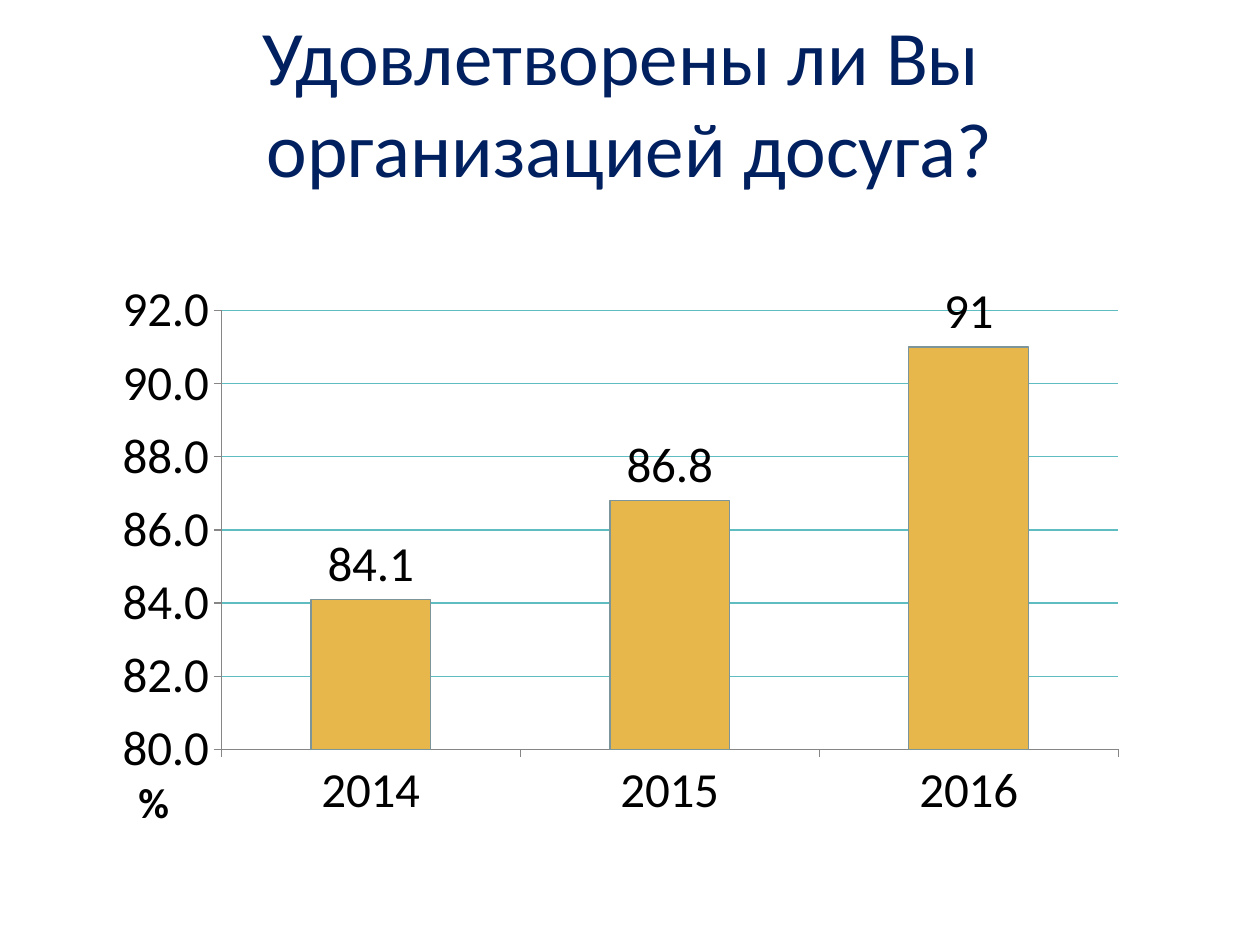
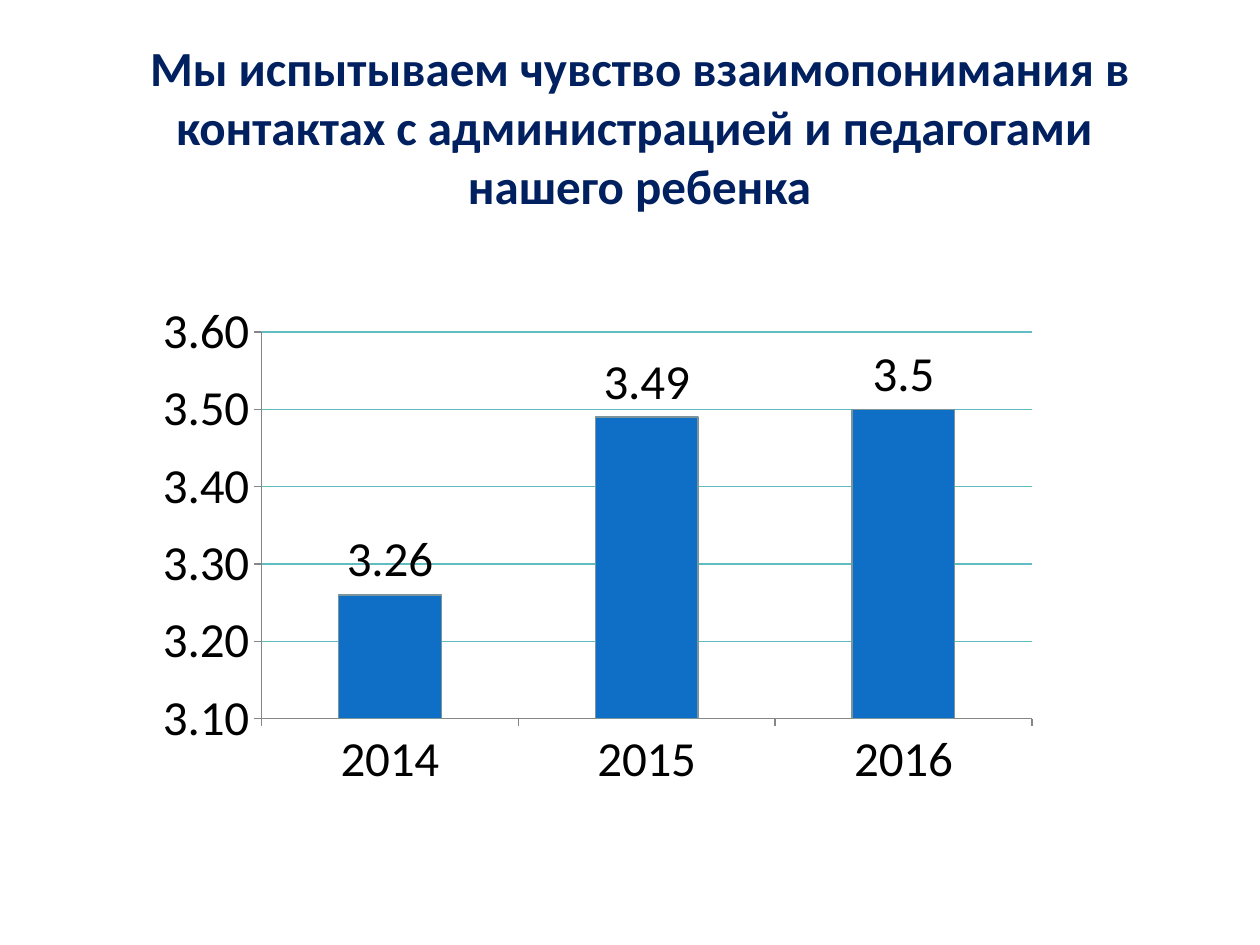
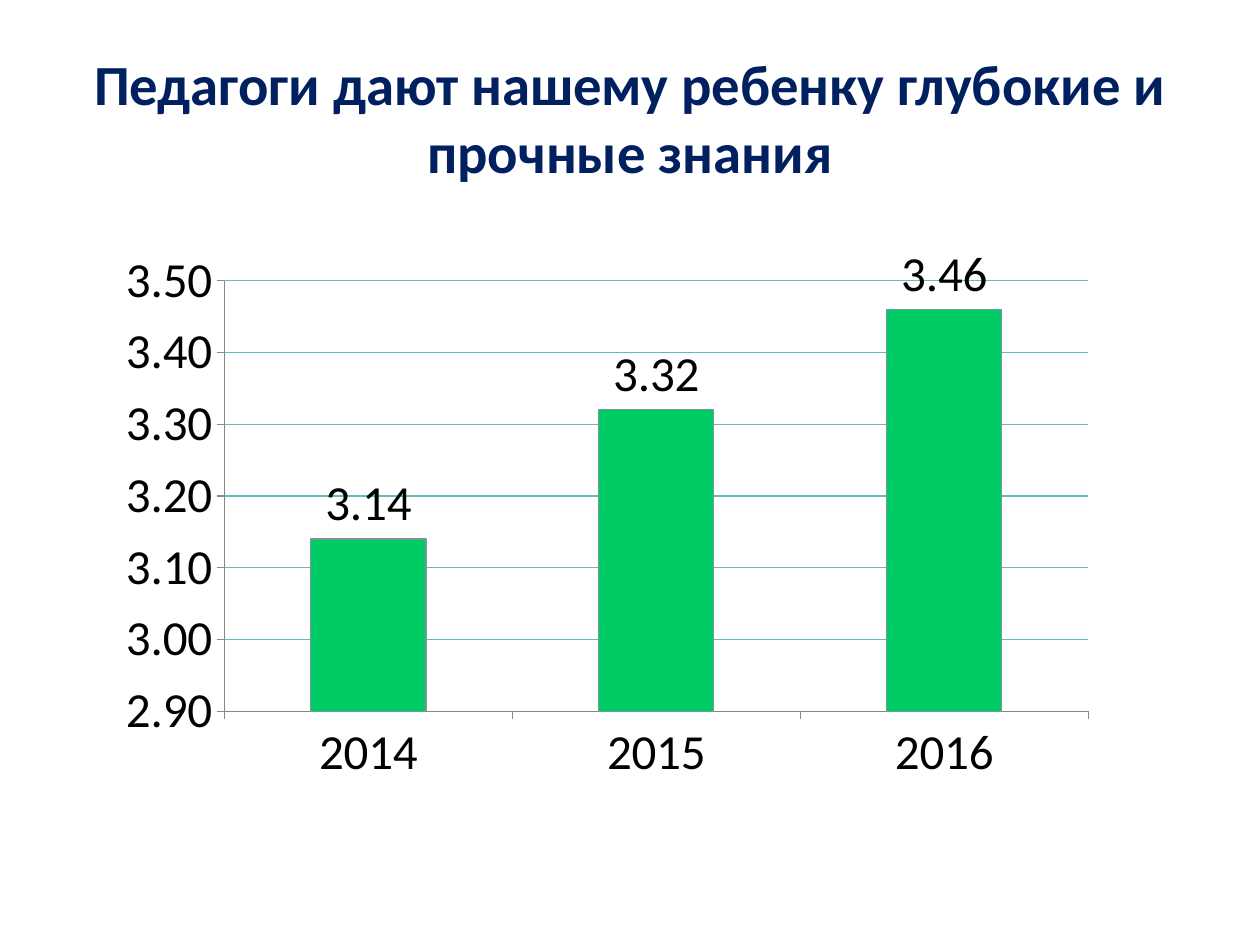
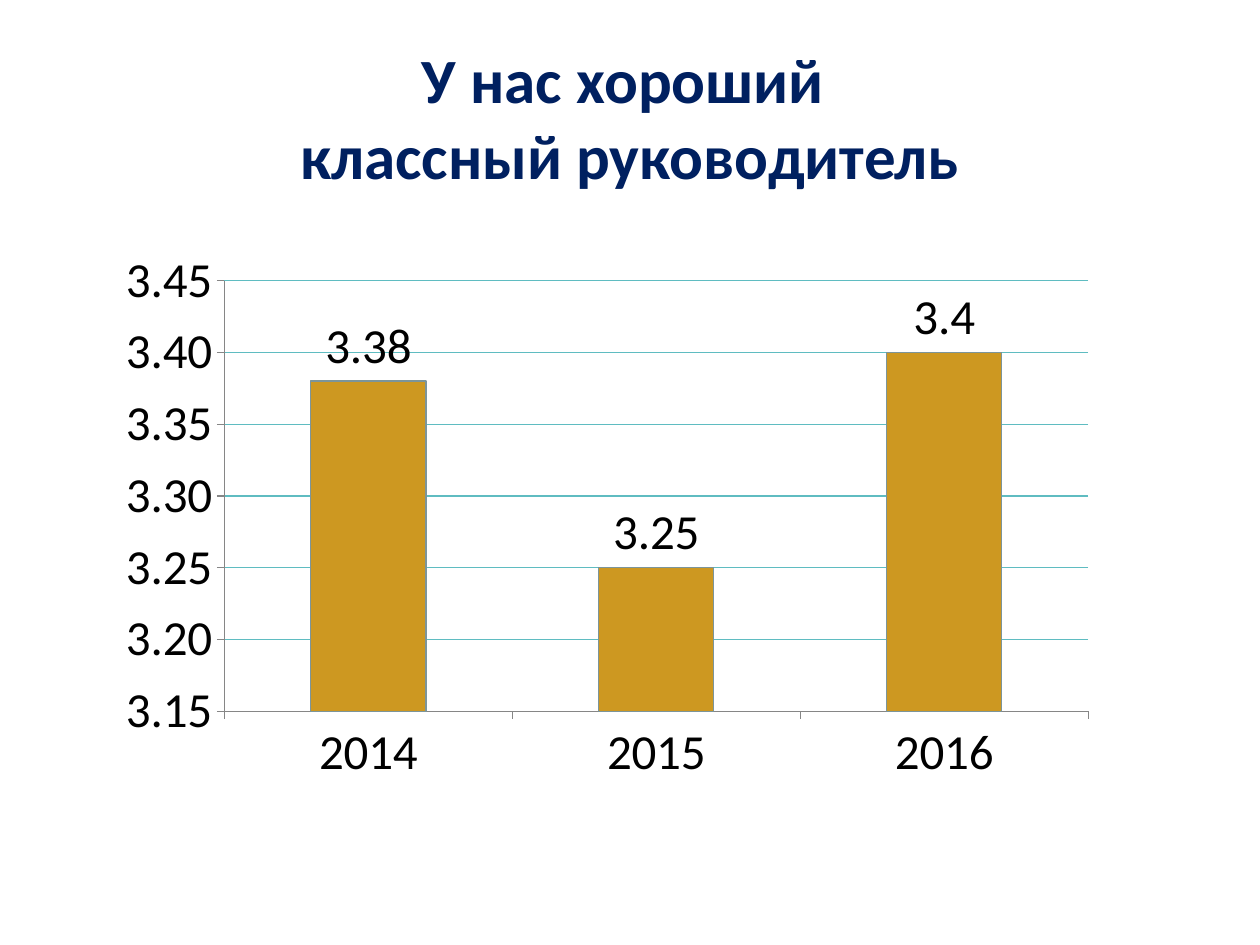
from lxml.etree import SubElement
from pptx import Presentation
from pptx.chart.data import CategoryChartData
from pptx.dml.color import RGBColor
from pptx.enum.chart import XL_CHART_TYPE, XL_LABEL_POSITION, XL_TICK_MARK
from pptx.enum.text import MSO_ANCHOR, MSO_AUTO_SIZE, PP_ALIGN
from pptx.oxml.ns import qn
from pptx.util import Pt

PX = 9144
FONT = "Calibri"
NAVY, BLACK, WHITE = "002060", "000000", "FFFFFF"
GRID, AXIS, OUTLINE = "5FBCC1", "868686", "7C959A"
YEARS = ["2014", "2015", "2016"]
TITLE_BOX = (50, 30, 900, 125)
CHART_BOX = (83, 147, 827, 499)
PLOT = (0.115, 0.152, 0.829, 0.685)

SLIDES = [
    dict(title="Удовлетворены ли Вы \vорганизацией досуга?", size=44, bold=False,
         title_box=(63, 21, 874, 118), chart_box=(72, 176, 863, 514),
         plot=(0.12, 0.137, 0.825, 0.678), values=[84.1, 86.8, 91],
         scale=(80, 92, 2), axis_format="0.0", color="E7B74B", unit="%"),
    dict(title="Мы испытываем чувство взаимопонимания в контактах "
               "с администрацией и педагогами \vнашего ребенка", size=28,
         title_box=(35, 29, 945, 142), chart_box=(114, 155, 754, 503),
         plot=(0.124, 0.216, 0.811, 0.61), values=[3.26, 3.49, 3.5],
         scale=(3.1, 3.6, 0.1), color="0F6FC6"),
    dict(title="Педагоги дают нашему ребенку глубокие и прочные знания", size=32.4,
         values=[3.14, 3.32, 3.46], scale=(2.9, 3.5, 0.1), color="00CC66"),
    dict(title="У нас хороший \vклассный руководитель", size=36,
         values=[3.38, 3.25, 3.4], scale=(3.15, 3.45, 0.05), color="CD9821"),
]


def rgb(color):
    """Turn a hex string into a colour."""
    return RGBColor.from_string(color)


def emu(box):
    """Turn lengths in px into EMU."""
    return [v * PX for v in box]


def style_font(font, size, color=BLACK, bold=False):
    """Apply the shared typeface with a size, colour and weight."""
    font.name, font.size, font.bold = FONT, Pt(size), bold
    font.color.rgb = rgb(color)


def style_line(line, color):
    """Give a line the shared width and a colour."""
    line.width = Pt(0.75)
    line.color.rgb = rgb(color)


def add_title(s, box, text, size, bold):
    """Place a centred title in its box."""
    tf = s.shapes.add_textbox(*emu(box)).text_frame
    tf.word_wrap = True
    tf.vertical_anchor = MSO_ANCHOR.MIDDLE
    p = tf.paragraphs[0]
    p.text = text
    p.alignment = PP_ALIGN.CENTER
    for r in p.runs:
        style_font(r.font, size, NAVY, bold)


def add_unit(s, box, text):
    """Place the axis unit near the lower left corner of the chart box."""
    x, y, w, h = box
    tf = s.shapes.add_textbox(*emu((x + 28, y + 435, 49, 50))).text_frame
    tf.word_wrap = False
    tf.auto_size = MSO_AUTO_SIZE.SHAPE_TO_FIT_TEXT
    tf.text = text
    style_font(tf.paragraphs[0].runs[0].font, 24, bold=True)


def set_plot(chart, plot):
    """Fix the inner plot area as fractions of the chart."""
    area = chart._chartSpace.chart.plotArea
    layout = area.find(qn("c:layout"))
    if layout is None:
        layout = SubElement(area, qn("c:layout"))
        area.insert(0, layout)
    manual = SubElement(layout, qn("c:manualLayout"))
    settings = [("layoutTarget", "inner"), ("xMode", "edge"), ("yMode", "edge")]
    settings += zip("xywh", plot)
    for tag, val in settings:
        SubElement(manual, qn(f"c:{tag}")).set("val", str(val))


def add_column_chart(s, box, plot, values, scale, axis_format, color):
    """Place a yearly column chart in its box."""
    data = CategoryChartData()
    data.categories = YEARS
    data.add_series("Series 1", values)
    chart = s.shapes.add_chart(XL_CHART_TYPE.COLUMN_CLUSTERED, *emu(box), data).chart
    chart.has_legend = chart.has_title = False
    style_font(chart.font, 28)
    set_plot(chart, plot)

    val_axis = chart.value_axis
    val_axis.minimum_scale, val_axis.maximum_scale, val_axis.major_unit = scale
    val_axis.has_major_gridlines = True
    style_line(val_axis.major_gridlines.format.line, GRID)
    val_axis.tick_labels.number_format = axis_format
    val_axis.tick_labels.number_format_is_linked = False
    for axis in (val_axis, chart.category_axis):
        axis.major_tick_mark = XL_TICK_MARK.OUTSIDE
        style_line(axis.format.line, AXIS)

    columns = chart.plots[0]
    columns.gap_width = 150
    columns.vary_by_categories = False
    series = columns.series[0]
    series.format.fill.solid()
    series.format.fill.fore_color.rgb = rgb(color)
    style_line(series.format.line, OUTLINE)
    labels = series.data_labels
    labels.show_value = True
    labels.number_format, labels.number_format_is_linked = "General", False
    labels.position = XL_LABEL_POSITION.OUTSIDE_END
    style_font(labels.font, 28)


def add_survey_slide(prs, title, size, values, scale, color, bold=True,
                     title_box=TITLE_BOX, chart_box=CHART_BOX, plot=PLOT,
                     axis_format="0.00", unit=None):
    """Add a slide with a survey question and its yearly results."""
    s = prs.slides.add_slide(prs.slide_layouts[6])
    s.background.fill.solid()
    s.background.fill.fore_color.rgb = rgb(WHITE)
    add_title(s, title_box, title, size, bold)
    add_column_chart(s, chart_box, plot, values, scale, axis_format, color)
    if unit:
        add_unit(s, chart_box, unit)


def main():
    """Build the deck and save it."""
    prs = Presentation()
    prs.slide_width, prs.slide_height = emu((1000, 750))
    for slide in SLIDES:
        add_survey_slide(prs, **slide)
    prs.save("out.pptx")


if __name__ == "__main__":
    main()
